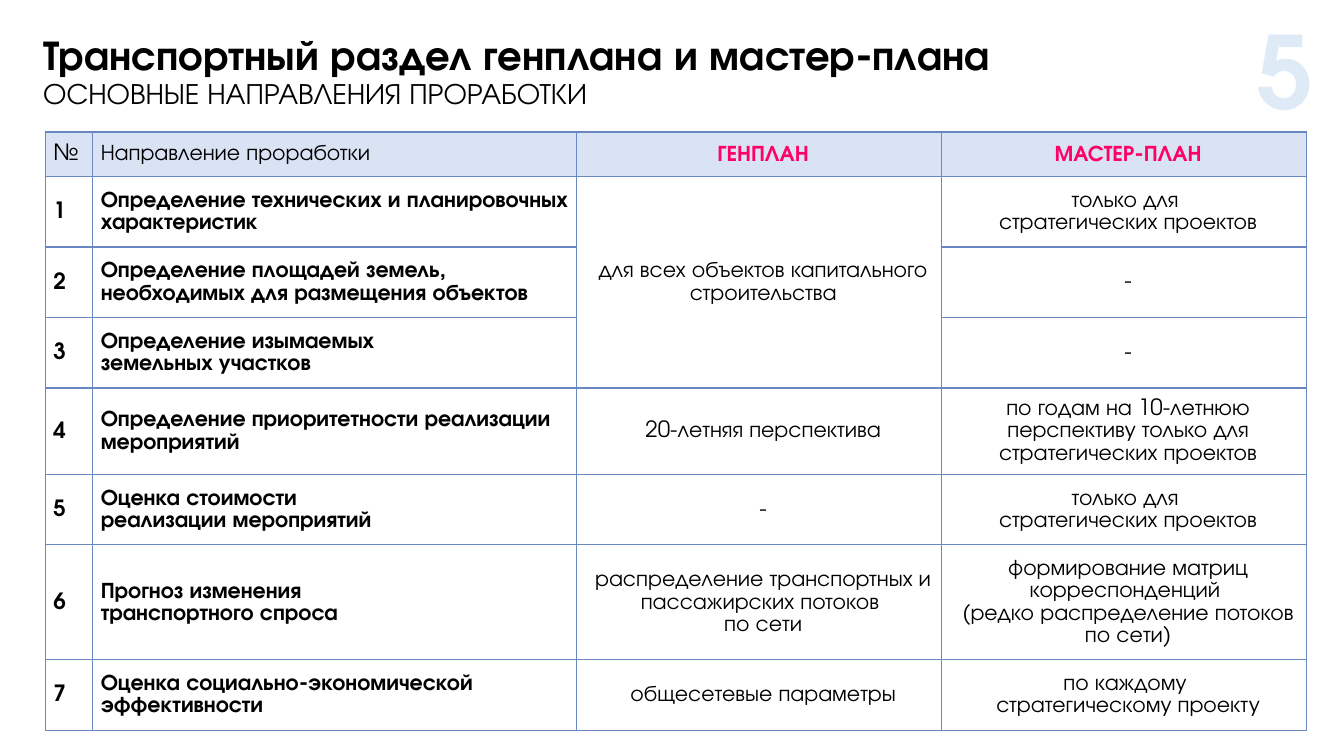
import copy
from dataclasses import dataclass

import lxml.etree
import pptx
import pptx.dml.color
import pptx.enum.text
import pptx.oxml.ns
import pptx.util

PX = 9144  # 100 px to the inch
ALIGN = pptx.enum.text.PP_ALIGN
MIDDLE = pptx.enum.text.MSO_ANCHOR.MIDDLE


@dataclass(frozen=True)
class Theme:
    font: str = "TeX Gyre Adventor"
    text: str = "000000"
    accent: str = "FF0066"
    number: str = "DEEBF7"
    header: str = "DAE3F3"
    border: str = "6987C3"
    title_size: int = 30
    subtitle_size: int = 21
    number_size: int = 72
    cell_size: int = 16


THEME = Theme()

COLUMNS = [47, 480, 362, 362]
ROW_HEIGHTS = [44, 70, 70, 70, 82, 70, 109, 70]
HEADER = ["№", "Направление проработки", "ГЕНПЛАН", "МАСТЕР-ПЛАН"]
STRATEGIC = "только для \nстратегических проектов"
# Direction, general plan, master plan
DIRECTIONS = [
    ("Определение технических и планировочных характеристик",
     "для всех объектов капитального строительства", STRATEGIC),
    ("Определение площадей земель, необходимых для размещения объектов", "", "-"),
    ("Определение изымаемых \nземельных участков", "", "-"),
    ("Определение приоритетности реализации мероприятий",
     "20-летняя перспектива",
     "по годам на 10-летнюю перспективу только для стратегических проектов"),
    ("Оценка стоимости \nреализации мероприятий", "-", STRATEGIC),
    ("Прогноз изменения \nтранспортного спроса",
     "распределение транспортных и пассажирских потоков \nпо сети",
     "формирование матриц корреспонденций \n(редко распределение потоков по сети)"),
    ("Оценка социально-экономической эффективности",
     "общесетевые параметры", "по каждому \nстратегическому проекту"),
]


def px(n):
    return pptx.util.Emu(n * PX)


def set_attrs(obj, values):
    for name, value in values.items():
        setattr(obj, name, value)


def add_text(p, text, size, color=THEME.text, bold=False):
    """Append text to a paragraph; each newline becomes a line break."""
    for i, line in enumerate(text.split("\n")):
        if i:
            p.add_line_break()
            br = p._p.findall(pptx.oxml.ns.qn("a:br"))[-1]
            br.insert(0, copy.deepcopy(r._r.rPr))
        r = p.add_run()
        r.text = line
        set_attrs(r.font, {"name": THEME.font, "size": pptx.util.Pt(size), "bold": bold})
        r.font.color.rgb = pptx.dml.color.RGBColor.from_string(color)


def add_box(s, box):
    tf = s.shapes.add_textbox(*map(px, box)).text_frame
    set_attrs(tf, {"word_wrap": True, "vertical_anchor": MIDDLE})
    return tf.paragraphs[0]


def add_borders(cell):
    tcPr = cell._tc.get_or_add_tcPr()
    for i, side in enumerate(("lnL", "lnR", "lnT", "lnB")):
        ln = lxml.etree.Element(pptx.oxml.ns.qn("a:" + side), w=str(pptx.util.Pt(1)))
        fill = lxml.etree.SubElement(ln, pptx.oxml.ns.qn("a:solidFill"))
        lxml.etree.SubElement(fill, pptx.oxml.ns.qn("a:srgbClr"), val=THEME.border)
        tcPr.insert(i, ln)


def draw_heading(s, box):
    p = add_box(s, box)
    p.line_spacing = 0.9
    add_text(p, "Транспортный раздел генплана и мастер-плана \n", THEME.title_size, bold=True)
    add_text(p, "ОСНОВНЫЕ НАПРАВЛЕНИЯ ПРОРАБОТКИ", THEME.subtitle_size)


def draw_page_number(s, box):
    p = add_box(s, box)
    p.alignment = ALIGN.RIGHT
    add_text(p, "5", THEME.number_size, THEME.number, True)


def fill_cell(cell, text, row, col):
    is_header, is_plan = row == 0, col >= 2
    set_attrs(cell, {"margin_left": px(8), "margin_right": 0, "margin_top": 0,
                     "margin_bottom": 0, "vertical_anchor": MIDDLE})
    if is_header:
        cell.fill.solid()
        cell.fill.fore_color.rgb = pptx.dml.color.RGBColor.from_string(THEME.header)
    else:
        cell.fill.background()
    add_borders(cell)
    p = cell.text_frame.paragraphs[0]
    set_attrs(p, {"alignment": ALIGN.CENTER if is_plan else ALIGN.LEFT, "line_spacing": 1.07})
    if text:
        color = THEME.accent if is_header and is_plan else THEME.text
        add_text(p, text, THEME.cell_size, color, bold=is_header == is_plan)


def draw_table(s, box):
    rows = [HEADER] + [(str(n), *d) for n, d in enumerate(DIRECTIONS, 1)]
    table = s.shapes.add_table(len(rows), len(COLUMNS), *map(px, box)).table
    set_attrs(table, {"first_row": False, "horz_banding": False})
    for column, width in zip(table.columns, COLUMNS):
        column.width = px(width)
    for row, height in zip(table.rows, ROW_HEIGHTS):
        row.height = px(height)
    for i, values in enumerate(rows):
        for j, text in enumerate(values):
            fill_cell(table.cell(i, j), text, i, j)
    # One general plan answer covers the first three directions
    table.cell(1, 2).merge(table.cell(3, 2))


def main():
    prs = pptx.Presentation()
    set_attrs(prs, {"slide_width": px(1333), "slide_height": px(750)})
    s = prs.slides.add_slide(prs.slide_layouts[6])
    draw_heading(s, (33, 21, 1260, 102))
    draw_page_number(s, (1013, 49, 300, 40))
    draw_table(s, (45, 131, sum(COLUMNS), sum(ROW_HEIGHTS)))
    prs.save("out.pptx")


if __name__ == "__main__":
    main()
